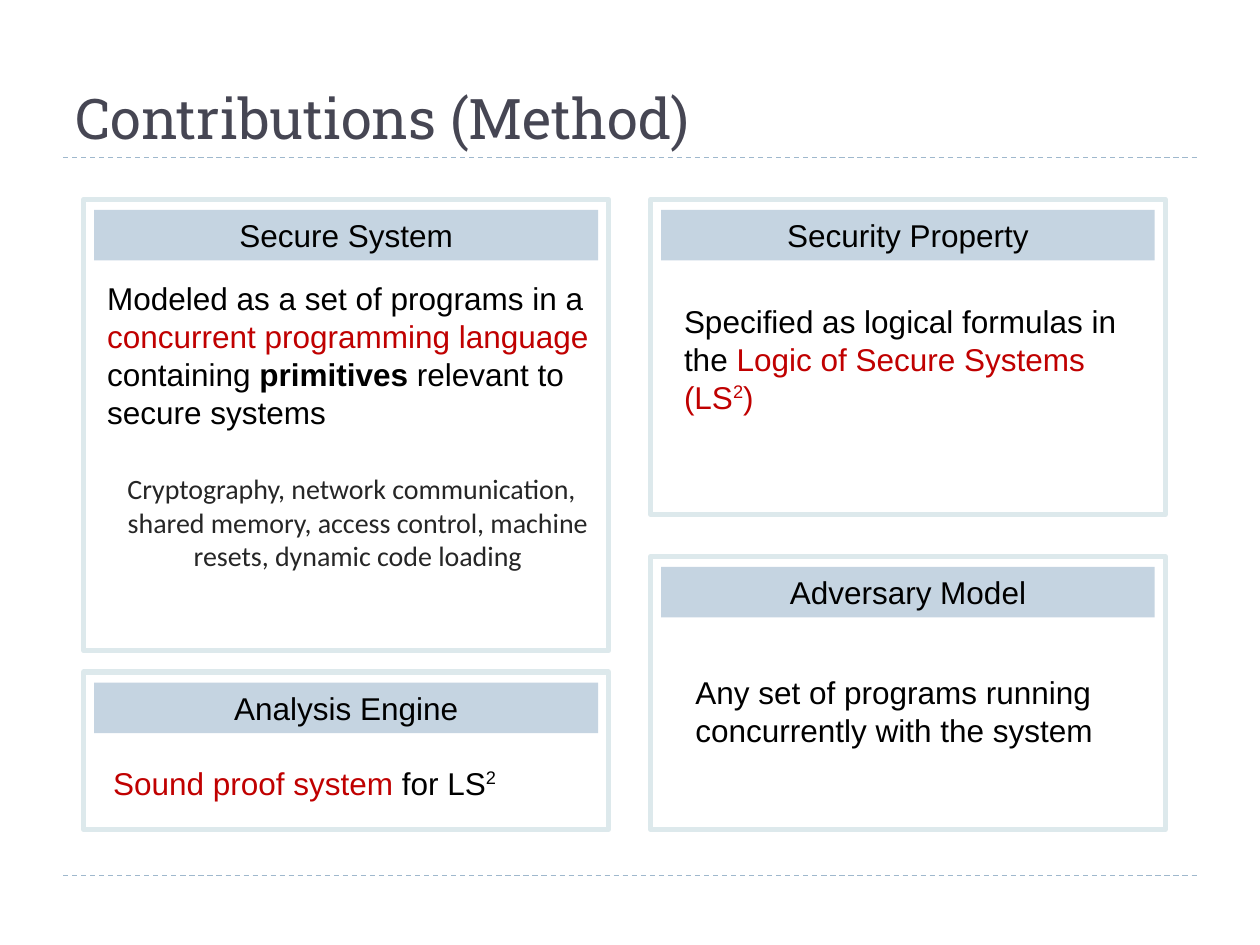
from dataclasses import dataclass

import pptx
import pptx.dml.color
import pptx.enum.dml
import pptx.enum.shapes
import pptx.enum.text
import pptx.oxml.ns
import pptx.util
from lxml import etree
from pptx.util import Cm, Pt


@dataclass(frozen=True)
class Theme:
    title: str = "464653"
    rule: str = "9FB8CD"
    band: str = "C5D4E1"
    border: str = "DDE9EC"
    text: str = "000000"
    accent: str = "C00000"
    detail: str = "262626"
    title_size: int = 32
    body_size: int = 18
    detail_size: int = 16
    title_font: str = "Roboto Slab"
    body_font: str = "Arial"
    detail_font: str = "Calibri"


theme = Theme()
rgb = pptx.dml.color.RGBColor.from_string
RECTANGLE = pptx.enum.shapes.MSO_SHAPE.RECTANGLE
CENTER = pptx.enum.text.PP_ALIGN.CENTER


def add_run(paragraph, text, color=theme.text, size=theme.body_size,
            font=theme.body_font, bold=False, superscript=False):
    run = paragraph.add_run()
    run.text = text
    run.font.name = font
    run.font.size = Pt(size)
    run.font.bold = bold
    run.font.color.rgb = rgb(color)
    if superscript:
        run.font._element.set("baseline", "33000")


def add_text_frame(left, top, width, height):
    """Add a wrapping text box, measured in cm, and return its text frame."""
    frame = slide.shapes.add_textbox(Cm(left), Cm(top), Cm(width), Cm(height)).text_frame
    frame.word_wrap = True
    return frame


deck = pptx.Presentation()
deck.slide_width, deck.slide_height = Cm(25.4), Cm(19.05)
slide = deck.slides.add_slide(deck.slide_layouts[6])

# Dashed rules under the title and above the footer
for rule_top in (3.18, 17.65):
    rule = slide.shapes.add_connector(
        pptx.enum.shapes.MSO_CONNECTOR.STRAIGHT,
        Cm(1.27), Cm(rule_top), Cm(24.13), Cm(rule_top))
    rule.line.color.rgb = rgb(theme.rule)
    rule.line.width = Pt(0.75)
    rule.line.dash_style = pptx.enum.dml.MSO_LINE.DASH
    etree.SubElement(rule._element.spPr, pptx.oxml.ns.qn("a:effectLst"))

title = add_text_frame(1.27, 0.43, 22.86, 2.74)
title.vertical_anchor = pptx.enum.text.MSO_ANCHOR.BOTTOM
add_run(title.paragraphs[0], "Contributions (Method)",
        theme.title, theme.title_size, theme.title_font)

# Panels: a heading band inset in an outlined frame, with a body text
left_column, right_column = (1.69, 10.58), (13.12, 10.37)
inset, band_height = 0.21, 1.02
accent = {"color": theme.accent}
raised = {"superscript": True}
panels = [
    ("Secure System", left_column, 4.02, 9.1, (1.91, 5.51, 10.36, 6.25), [
        ("Modeled as a set of programs in a ", {}),
        ("concurrent programming language ", accent),
        ("containing ", {}),
        ("primitives", {"bold": True}),
        (" relevant to secure systems", {})]),
    ("Security Property", right_column, 4.02, 6.35, (13.54, 5.97, 9.53, 3.33), [
        ("Specified as logical formulas in the ", {}),
        ("Logic of Secure Systems (LS", accent),
        ("2", accent | raised),
        (")", accent)]),
    ("Adversary Model", right_column, 11.22, 5.5, (13.77, 13.44, 9.09, 1.8), [
        ("Any set of programs running concurrently with the system", {})]),
    ("Analysis Engine", left_column, 13.55, 3.17, (2.03, 15.27, 8.33, 1.02), [
        ("Sound proof system ", accent),
        ("for LS", {}),
        ("2", raised)]),
]
bodies = {}
for heading, (left, width), top, height, body_box, body_runs in panels:
    band = slide.shapes.add_shape(
        RECTANGLE, Cm(left + inset), Cm(top + inset),
        Cm(width - 2 * inset), Cm(band_height))
    band.shadow.inherit = False
    band.fill.solid()
    band.fill.fore_color.rgb = rgb(theme.band)
    band.line.fill.background()
    band.text_frame.paragraphs[0].alignment = CENTER
    add_run(band.text_frame.paragraphs[0], heading)

    border = slide.shapes.add_shape(RECTANGLE, Cm(left), Cm(top), Cm(width), Cm(height))
    border.shadow.inherit = False
    border.fill.background()
    border.line.color.rgb = rgb(theme.border)
    border.line.width = Pt(3)

    bodies[heading] = add_text_frame(*body_box)
    for text, style in body_runs:
        add_run(bodies[heading].paragraphs[0], text, **style)

# Examples of the primitives, set apart below the first body text
examples = bodies["Secure System"].add_paragraph()
examples.alignment = CENTER
examples.space_before = Pt(23.5)
indents = examples._p.get_or_add_pPr()
indents.set("marL", str(Cm(0.25)))
indents.set("indent", str(Cm(-0.76)))
add_run(examples,
        "Cryptography, network communication, shared memory, access control, "
        "machine resets, dynamic code loading",
        theme.detail, theme.detail_size, theme.detail_font)

deck.save("out.pptx")
